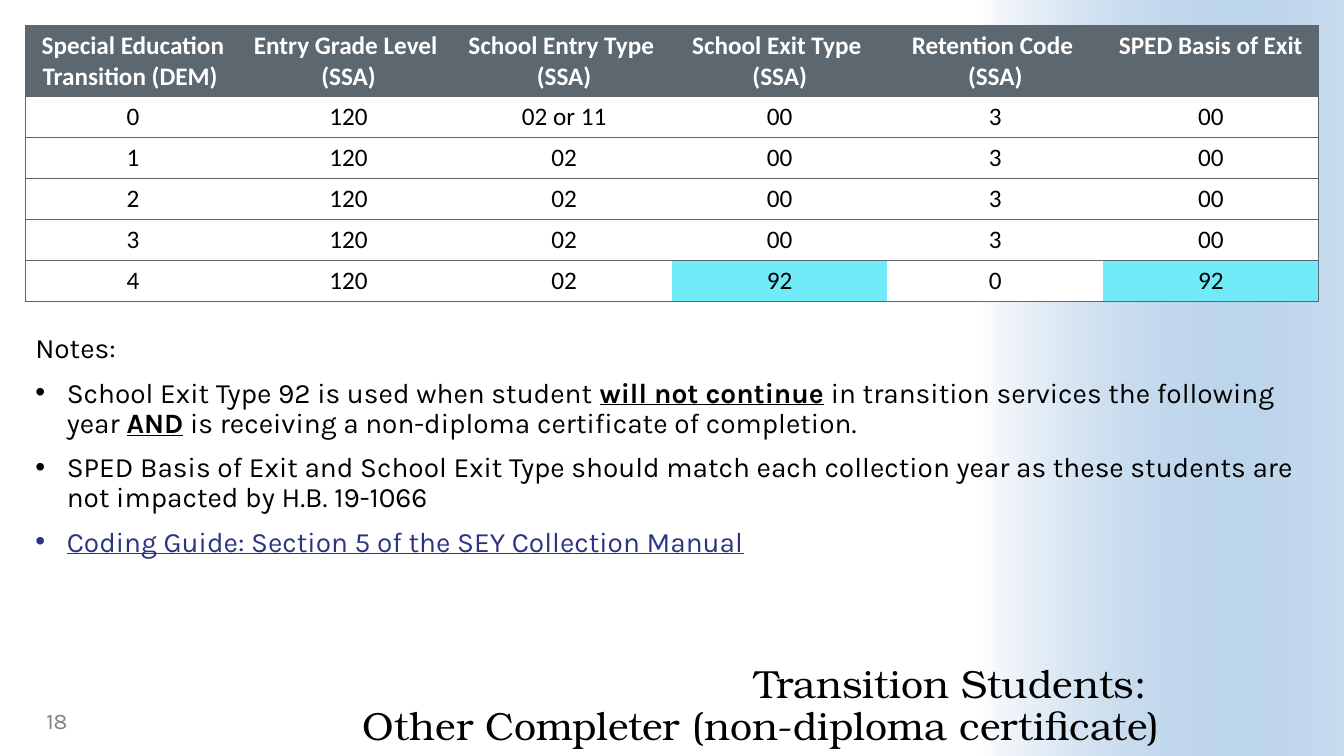
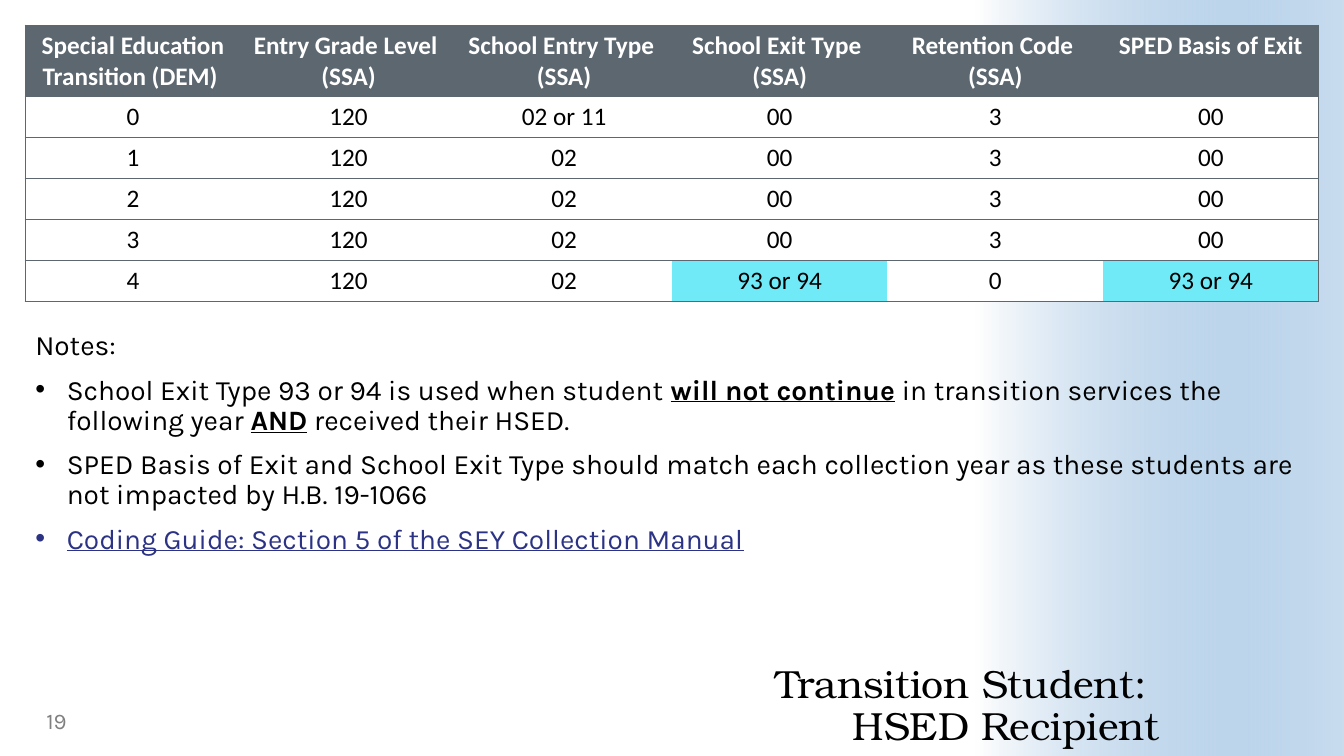
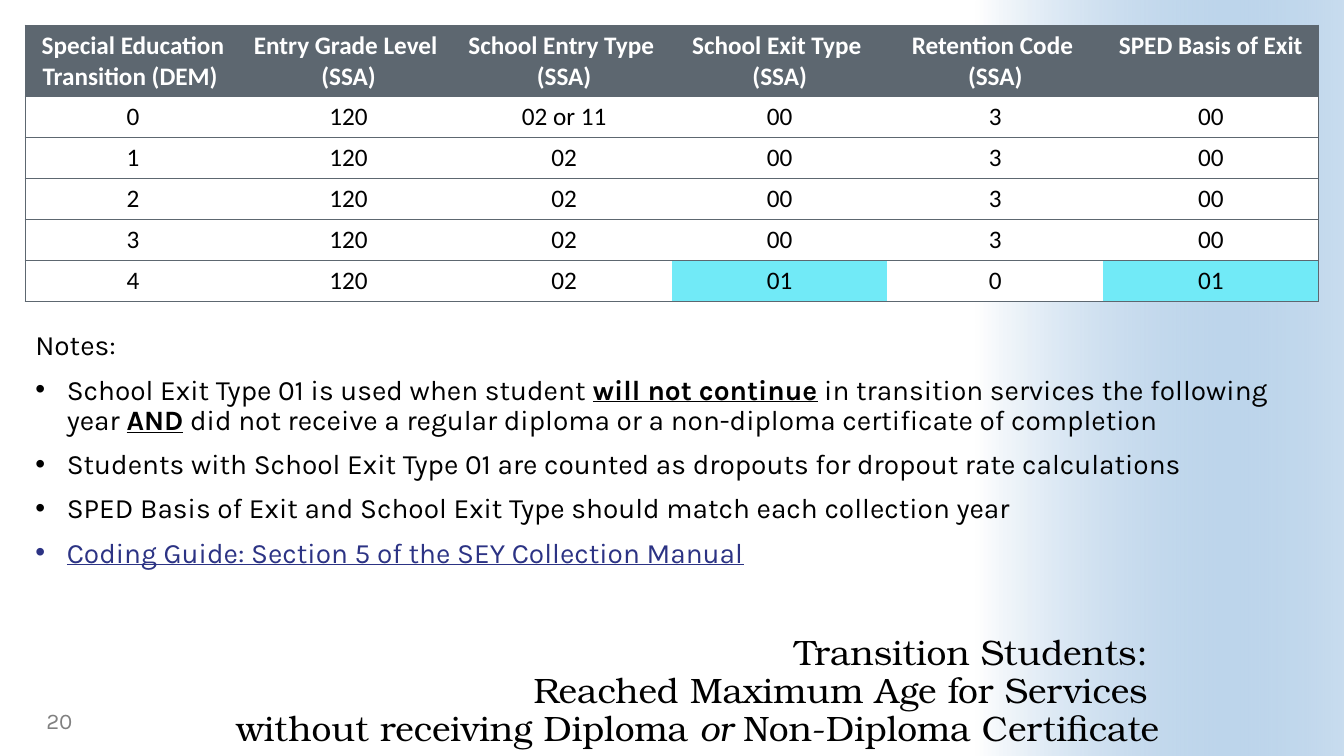
"""Build three slides of transition student coding tables with notes."""
import lxml.etree
import pptx
import pptx.dml.color
import pptx.enum.shapes
import pptx.enum.text
import pptx.oxml.ns
import pptx.util

Pt = pptx.util.Pt
qn = pptx.oxml.ns.qn
ALIGN = pptx.enum.text.PP_ALIGN
ANCHOR = pptx.enum.text.MSO_ANCHOR

SLATE, WHITE, BLACK, CYAN = "5D6770", "FFFFFF", "000000", "71EAF7"
NAVY, GRAY, SKY = "2C3384", "808080", "488BC9"
PAGE_WIDTH, PAGE_HEIGHT = 960, 540
MARGIN = 18
CONTENT_WIDTH = PAGE_WIDTH - 2 * MARGIN
TITLE_RIGHT = 828
BAND_WIDTH = 263.5
HEADER_HEIGHT, ROW_HEIGHT = 50.4, 28.8
BULLET_INDENT = 22.5
NO_GRID_STYLE = "{2D5ABB26-0587-4C30-8999-92F81FD0307C}"

TITLE_FONT = {"name": "TeX Gyre Bonum", "size": Pt(28)}
BODY_FONT = {"name": "Karla", "size": Pt(20)}
NUMBER_FONT = {"name": "Karla", "size": Pt(16)}
CELL_FONT = {"name": "Calibri", "size": Pt(18), "bold": False}
HEADER_FONT = {**CELL_FONT, "bold": True}
STRONG = {"bold": True, "underline": True}

HEADERS = [
    "Special Education Transition (DEM) ",
    "Entry Grade Level \n(SSA)",
    "School Entry Type \n(SSA)",
    "School Exit Type \n(SSA)",
    "Retention Code \n(SSA)",
    "SPED Basis of Exit",
]
MATCH = "SPED Basis of Exit and School Exit Type should match each collection year"
MATCH_BILL = MATCH + " as these students are not impacted by H.B. 19-1066"
GUIDE = "Coding Guide: Section 5 of the SEY Collection Manual"

SLIDES = [
    {
        "number": 18,
        "title": [("Transition Students: \nOther Completer (non-diploma certificate)", {})],
        "title_left": 231,
        "notes_top": 235.4,
        "code": "92",
        "outcome": " is receiving a non-diploma certificate of completion.",
        "points": [MATCH_BILL],
    },
    {
        "number": 19,
        "title": [("Transition Student: \nHSED Recipient", {})],
        "title_left": 307,
        "notes_top": 233.3,
        "code": "93 or 94",
        "outcome": " received their HSED.",
        "points": [MATCH_BILL],
    },
    {
        "number": 20,
        "title": [
            ("Transition Students: \nReached Maximum Age for Services \n"
             "without receiving Diploma ", {}),
            ("or ", {"italic": True}),
            ("Non-Diploma Certificate", {}),
        ],
        "title_left": 87,
        "title_format": {"size": Pt(25.2)},
        "notes_top": 233.3,
        "code": "01",
        "outcome": " did not receive a regular diploma or a non-diploma certificate of completion",
        "points": [
            "Students with School Exit Type 01 are counted as dropouts for dropout rate calculations",
            MATCH,
        ],
    },
]


def rgb(value):
    """Turn a hex string into a colour."""
    return pptx.dml.color.RGBColor.from_string(value)


def apply(target, values):
    """Set each attribute in a dict of format values."""
    for name, value in values.items():
        setattr(target, name, value)


def place(shape, left, top, width, height):
    """Move and size a shape in points."""
    apply(shape, {"left": Pt(left), "top": Pt(top), "width": Pt(width), "height": Pt(height)})


def write(para, text, values, colour=BLACK):
    """Add formatted text to a paragraph, breaking lines where asked."""
    for index, line in enumerate(text.split("\n")):
        if index:
            para.add_line_break()
        span = para.add_run()
        span.text = line
        apply(span.font, values)
        span.font.color.rgb = rgb(colour)


def add_band(page, layout, left, top, width, height):
    """Put the fading band, turned a quarter, on the shared layout."""
    band = page.shapes.add_shape(pptx.enum.shapes.MSO_SHAPE.RECTANGLE, 0, 0, 0, 0)
    place(band, left + (width - height) / 2, top + (height - width) / 2, height, width)
    band.rotation = 270
    band.shadow.inherit = False
    band.line.fill.background()
    band.fill.gradient()
    band.fill.gradient_angle = 270
    for stop, colour, position in zip(band.fill.gradient_stops, (WHITE, SKY), (0, 1)):
        stop.color.rgb = rgb(colour)
        stop.position = position
    end_colour = list(band.element.iter(qn("a:gs")))[-1].find(qn("a:srgbClr"))
    lxml.etree.SubElement(end_colour, qn("a:alpha"), val="30000")
    layout.shapes.element.insert(2, band.element)


def add_title(page, spans, values, left, top, width, height):
    """Fill the title placeholder, right-aligned at the bottom."""
    place(page.shapes.title, left, top, width, height)
    box = page.shapes.title.text_frame
    apply(box, {
        "margin_left": 0, "margin_right": 0, "margin_top": 0, "margin_bottom": 0,
        "vertical_anchor": ANCHOR.BOTTOM, "word_wrap": True,
        "auto_size": pptx.enum.text.MSO_AUTO_SIZE.NONE,
    })
    para = box.paragraphs[0]
    apply(para, {"alignment": ALIGN.RIGHT, "line_spacing": 0.9})
    for text, extra in spans:
        write(para, text, {**TITLE_FONT, **values, **extra})


def set_borders(cell, sides):
    """Draw slate borders on the named sides of a cell."""
    properties = cell._tc.get_or_add_tcPr()
    for index, side in enumerate(sides):
        line = lxml.etree.Element(qn("a:ln" + side), w=str(Pt(1)))
        fill = lxml.etree.SubElement(line, qn("a:solidFill"))
        lxml.etree.SubElement(fill, qn("a:srgbClr"), val=SLATE)
        properties.insert(index, line)


def add_code_table(page, code, left, top, width):
    """Add the coding table with the exit codes of the last row marked."""
    rows = [HEADERS]
    rows += [[str(year), "120", "02" if year else "02 or 11", "00", "3", "00"] for year in range(4)]
    rows.append(["4", "120", "02", code, "0", code])
    height = HEADER_HEIGHT + ROW_HEIGHT * (len(rows) - 1)
    last = len(HEADERS) - 1
    frame = page.shapes.add_table(
        len(rows), len(HEADERS), Pt(left), Pt(top), Pt(width), Pt(height))
    frame.element.find(".//" + qn("a:tableStyleId")).text = NO_GRID_STYLE
    table = frame.table
    table.horz_banding = False
    for row_index, row in enumerate(rows):
        heading = row_index == 0
        table.rows[row_index].height = Pt(ROW_HEIGHT if row_index else HEADER_HEIGHT)
        for column, text in enumerate(row):
            cell = table.cell(row_index, column)
            marked = row is rows[-1] and column in (3, last)
            cell.fill.solid()
            cell.fill.fore_color.rgb = rgb(SLATE if heading else CYAN if marked else WHITE)
            sides = ["L"] * (column == 0) + ["R"] * (column == last) + ["T", "B"]
            set_borders(cell, sides)
            para = cell.text_frame.paragraphs[0]
            para.alignment = ALIGN.CENTER
            write(para, text, HEADER_FONT if heading else CELL_FONT, WHITE if heading else BLACK)


def set_bullet(para, bulleted):
    """Give a paragraph a hanging bullet, or none."""
    properties = para._p.get_or_add_pPr()
    indent = Pt(BULLET_INDENT) if bulleted else 0
    properties.set("marL", str(indent))
    properties.set("indent", str(-indent))
    if bulleted:
        lxml.etree.SubElement(properties, qn("a:buFont"), typeface="Arial")
        lxml.etree.SubElement(properties, qn("a:buChar"), char="•")
    else:
        lxml.etree.SubElement(properties, qn("a:buNone"))


def add_notes(page, content, left, top, width, height):
    """Fill the body placeholder with the notes list."""
    body = page.placeholders[1]
    place(body, left, top, width, height)
    box = body.text_frame
    apply(box, {"word_wrap": True, "auto_size": pptx.enum.text.MSO_AUTO_SIZE.NONE})
    usage = [
        (f"School Exit Type {content['code']} is used when student ", {}),
        ("will not continue", STRONG),
        (" in transition services the following year ", {}),
        ("AND", STRONG),
        (content["outcome"], {}),
    ]
    lines = [[("Notes:", {})], usage]
    lines += [[(point, {})] for point in content["points"]]
    lines.append([(GUIDE, {"underline": True})])
    for index, line in enumerate(lines):
        para = box.add_paragraph() if index else box.paragraphs[0]
        set_bullet(para, index > 0)
        apply(para, {"line_spacing": 0.9, "space_before": Pt(10 if index else 0)})
        for text, extra in line:
            write(para, text, {**BODY_FONT, **extra}, NAVY if text == GUIDE else BLACK)


def add_number(page, number, left, top, width, height):
    """Add the slide number at the lower left."""
    box = page.shapes.add_textbox(Pt(left), Pt(top), Pt(width), Pt(height)).text_frame
    apply(box, {"word_wrap": True, "vertical_anchor": ANCHOR.MIDDLE})
    write(box.paragraphs[0], str(number), NUMBER_FONT, GRAY)


def add_coding_slide(deck, layout, content):
    """Add one slide with its table, notes, title and number."""
    page = deck.slides.add_slide(layout)
    left = content["title_left"]
    add_title(page, content["title"], content.get("title_format", {}),
              left, 464.4, TITLE_RIGHT - left, 70.6)
    add_code_table(page, content["code"], MARGIN, MARGIN, CONTENT_WIDTH)
    top = content["notes_top"]
    add_notes(page, content, MARGIN, top, CONTENT_WIDTH, 451.4 - top)
    add_number(page, content["number"], 26, 500.4, 216, 28.8)
    return page


def main():
    """Build and save the deck."""
    deck = pptx.Presentation()
    apply(deck, {"slide_width": Pt(PAGE_WIDTH), "slide_height": Pt(PAGE_HEIGHT)})
    layout = deck.slide_layouts[1]
    pages = [add_coding_slide(deck, layout, content) for content in SLIDES]
    add_band(pages[0], layout, PAGE_WIDTH - BAND_WIDTH, 0, BAND_WIDTH, PAGE_HEIGHT)
    deck.save("out.pptx")


if __name__ == "__main__":
    main()
